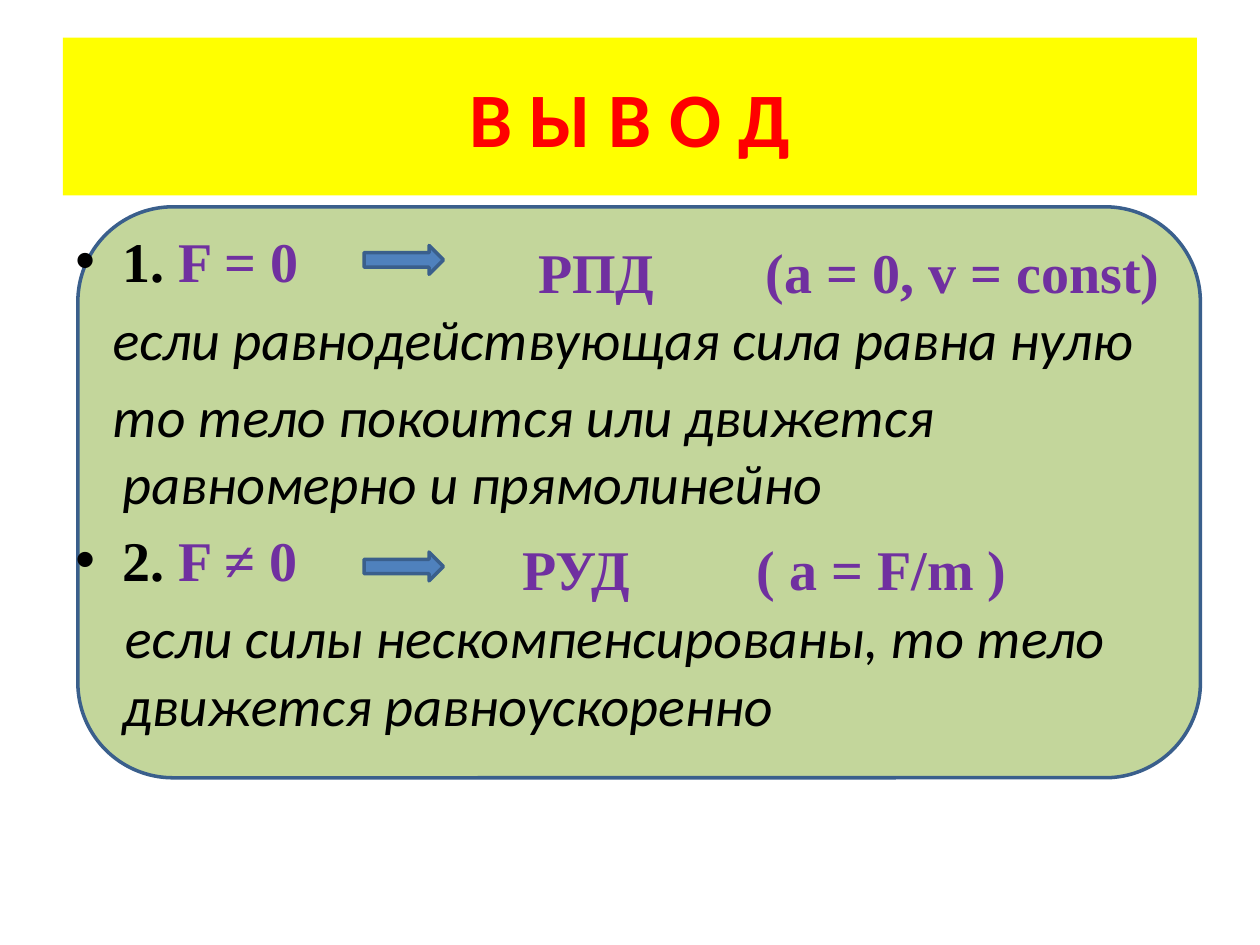
from lxml import etree
from pptx import Presentation
from pptx.dml.color import RGBColor
from pptx.enum.shapes import MSO_SHAPE
from pptx.enum.text import MSO_ANCHOR, PP_ALIGN
from pptx.oxml.ns import qn
from pptx.util import Cm, Pt

RECTANGLE = MSO_SHAPE.RECTANGLE
ROUNDED = MSO_SHAPE.ROUNDED_RECTANGLE
RIGHT_ARROW = MSO_SHAPE.RIGHT_ARROW
MIDDLE = MSO_ANCHOR.MIDDLE
CENTER = PP_ALIGN.CENTER

YELLOW = RGBColor(0xFF, 0xFF, 0x00)
RED = RGBColor(0xFF, 0x00, 0x00)
GREEN = RGBColor(0xC3, 0xD6, 0x9B)
BLUE = RGBColor(0x4F, 0x81, 0xBD)
OUTLINE = RGBColor(0x3A, 0x5F, 0x8C)
PURPLE = RGBColor(0x70, 0x30, 0xA0)
BLACK = RGBColor(0x00, 0x00, 0x00)

SANS, SERIF = "Calibri", "Times New Roman"
HANGING = Cm(0.95)

# Offsets in cm from the top left corner of the conclusions box
LAWS = [
    {"number": "1. ", "force": "F = 0", "top": 0.33, "arrow_top": 0.5,
     "formulas": [("РПД", 9.58), ("(a = 0, v = const)", 14.17)],
     "statements": [
         ("если равнодействующая сила равна нулю", -0.2),
         ("то тело покоится или движется равномерно и прямолинейно", -0.2)]},
    {"number": "2. ", "force": "F ≠ 0", "top": 6.32, "arrow_top": 6.68,
     "formulas": [("РУД", 9.27), ("( a = F/m )", 13.99)],
     "statements": [
         ("если силы нескомпенсированы, то тело движется равноускоренно",
          0.05)]},
]


def style_run(run, font, color, size=32, bold=False, italic=False):
    run.font.name = font
    run.font.size = Pt(size)
    run.font.bold = bold
    run.font.italic = italic
    run.font.color.rgb = color


def add_panel(slide, kind, left, top, width, height, fill, outline=None):
    panel = slide.shapes.add_shape(kind, left, top, width, height)
    panel.shadow.inherit = False
    panel.fill.solid()
    panel.fill.fore_color.rgb = fill
    if outline is None:
        panel.line.fill.background()
    else:
        panel.line.color.rgb = outline
        panel.line.width = Pt(2)
    return panel


def add_title(slide, left, top, width, height):
    banner = add_panel(slide, RECTANGLE, left, top, width, height, YELLOW)
    frame = banner.text_frame
    frame.text = "В Ы В О Д"
    frame.vertical_anchor = MIDDLE
    heading = frame.paragraphs[0]
    heading.alignment = CENTER
    style_run(heading.runs[0], SANS, RED, size=44, bold=True)


def set_indent(paragraph, first_line, bullet=False):
    properties = paragraph._p.get_or_add_pPr()
    properties.set("marL", str(HANGING))
    properties.set("indent", str(first_line))
    if bullet:
        etree.SubElement(properties, qn("a:buFont"), typeface="Arial")
        etree.SubElement(properties, qn("a:buChar"), char="•")
    else:
        etree.SubElement(properties, qn("a:buNone"))


def next_paragraph(frame):
    """Return the unused first paragraph, or a new one after the last."""
    last = frame.paragraphs[-1]
    paragraph = last if not last.runs else frame.add_paragraph()
    paragraph.space_before = Pt(5.7)
    return paragraph


def write_law(frame, law):
    heading = next_paragraph(frame)
    set_indent(heading, -HANGING, bullet=True)
    for text, color in ((law["number"], BLACK), (law["force"], PURPLE)):
        run = heading.add_run()
        run.text = text
        style_run(run, SERIF, color, bold=True)
    for text, first_line in law["statements"]:
        statement = next_paragraph(frame)
        statement.text = text
        set_indent(statement, Cm(first_line))
        style_run(statement.runs[0], SANS, BLACK, italic=True)


def add_consequence(slide, left, top, law):
    """Place the arrow and the formulas to the right of the force."""
    add_panel(slide, RIGHT_ARROW, left + Cm(6.07), top + Cm(law["arrow_top"]),
              Cm(1.6), Cm(0.58), BLUE, OUTLINE)
    for text, offset in law["formulas"]:
        formula = slide.shapes.add_textbox(
            left + Cm(offset), top + Cm(law["top"]), Cm(8.7), Cm(1.25))
        frame = formula.text_frame
        frame.margin_left = frame.margin_right = 0
        frame.margin_top = frame.margin_bottom = 0
        frame.word_wrap = True
        frame.text = text
        style_run(frame.paragraphs[0].runs[0], SERIF, PURPLE, bold=True)


def add_conclusions(slide, left, top, width, height):
    add_panel(slide, ROUNDED, left + Cm(0.3), top - Cm(0.28),
              Cm(22.63), Cm(11.51), GREEN, OUTLINE)
    frame = slide.shapes.add_textbox(left, top, width, height).text_frame
    frame.word_wrap = True
    for law in LAWS:
        write_law(frame, law)
        add_consequence(slide, left, top, law)


def main():
    presentation = Presentation()
    presentation.slide_width = Cm(25.4)
    presentation.slide_height = Cm(19.05)
    slide = presentation.slides.add_slide(presentation.slide_layouts[6])
    add_title(slide, Cm(1.27), Cm(0.76), Cm(22.86), Cm(3.18))
    add_conclusions(slide, Cm(1.27), Cm(4.45), Cm(22.86), Cm(12.57))
    presentation.save("out.pptx")


if __name__ == "__main__":
    main()
